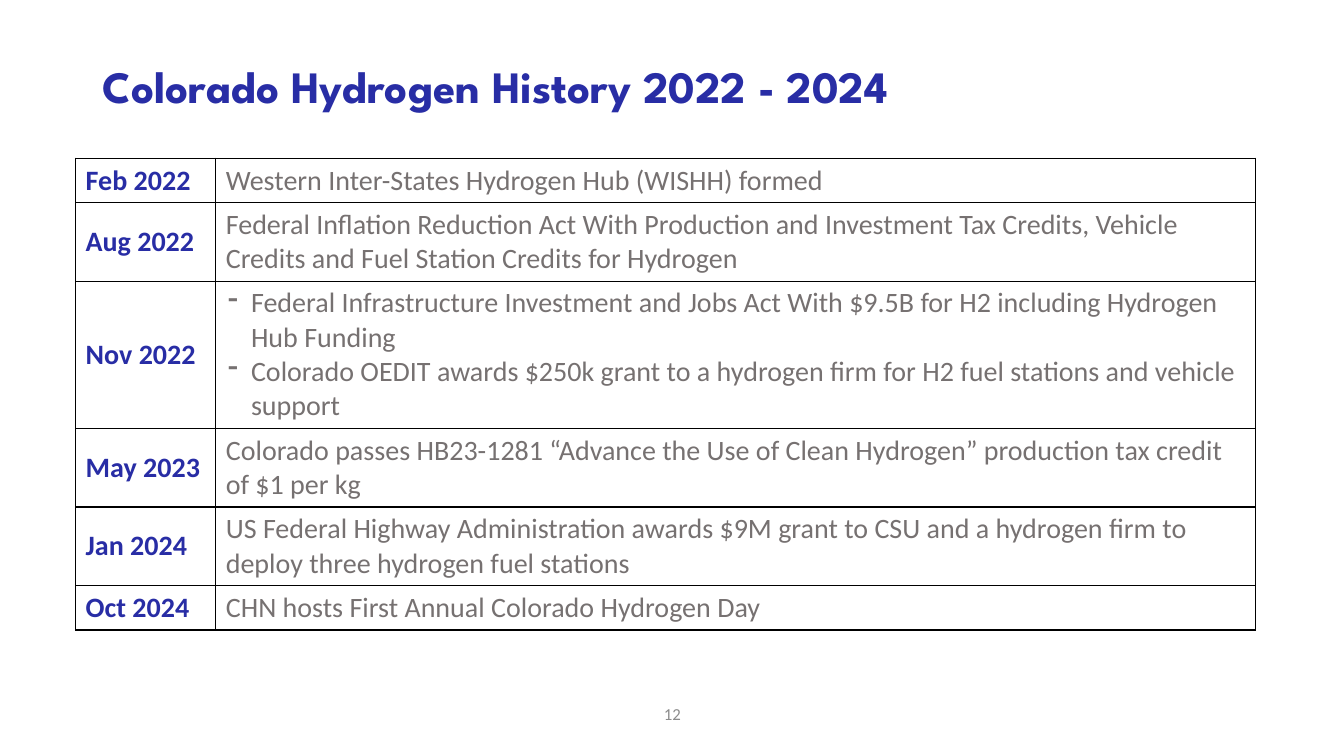
from lxml.etree import SubElement as Sub
from pptx import Presentation
from pptx.dml.color import RGBColor as RGB
from pptx.enum.text import MSO_ANCHOR as Anchor, PP_ALIGN as Align
from pptx.oxml import parse_xml
from pptx.oxml.ns import nsdecls, qn
from pptx.util import Inches, Pt

WIDE, HIGH = 13.33, 7.5
BLUE, GREY, PALE, BLACK = "282DA5", "767171", "8C8C8C", "000000"
LINE, PAD = 0.34, 0.1  # height of a text line, and of a cell's two margins
COLS = (1.39, 10.31)
EVENTS = [
    ("Feb 2022", 1, ["Western Inter-States Hydrogen Hub (WISHH) formed"]),
    ("Aug 2022", 2, ["Federal Inflation Reduction Act With Production and Investment Tax Credits, "
                     "Vehicle Credits and Fuel Station Credits for Hydrogen"]),
    ("Nov 2022", 4, ["Federal Infrastructure Investment and Jobs Act With $9.5B for H2 "
                     "including Hydrogen Hub Funding",
                     "Colorado OEDIT awards $250k grant to a hydrogen firm for H2 fuel "
                     "stations and vehicle support"]),
    ("May 2023", 2, ["Colorado passes HB23-1281 “Advance the Use of Clean Hydrogen” "
                     "production tax credit of $1 per kg"]),
    ("Jan 2024", 2, ["US Federal Highway Administration awards $9M grant to CSU and "
                     "a hydrogen firm to deploy three hydrogen fuel stations"]),
    ("Oct 2024", 1, ["CHN hosts First Annual Colorado Hydrogen Day"]),
]


def color(code):
    return RGB.from_string(code)


def bullet(para, mark="⁃", step=0.25):
    props = para._p.get_or_add_pPr()
    props.set("marL", str(Inches(step)))
    props.set("indent", str(-Inches(step)))
    Sub(props, qn("a:buChar")).set("char", mark)


def write(frame, *lines, size=20, face="Calibri", ink=GREY, bold=False,
          align=Align.LEFT, space=None, marks=False):
    frame.word_wrap = True
    for i, line in enumerate(lines):
        para = frame.add_paragraph() if i else frame.paragraphs[0]
        if marks:
            bullet(para)
        para.alignment = align
        para.line_spacing = space
        run = para.add_run()
        run.text = line
        font = run.font
        font.size, font.name, font.bold = Pt(size), face, bold
        font.color.rgb = color(ink)


def label(slide, text, left, top, width, height, **form):
    box = slide.shapes.add_textbox(*map(Inches, (left, top, width, height)))
    box.text_frame.vertical_anchor = Anchor.MIDDLE
    write(box.text_frame, text, **form)


def border(cell):
    cell.fill.background()
    props = cell._tc.get_or_add_tcPr()
    for i, side in enumerate("LRTB"):
        props.insert(i, parse_xml(
            f'<a:ln{side} {nsdecls("a")} w="{Pt(1)}"><a:solidFill>'
            f'<a:srgbClr val="{BLACK}"/></a:solidFill></a:ln{side}>'))


def timeline(slide, left, top):
    highs = [PAD + LINE * count for _, count, _ in EVENTS]
    frame = slide.shapes.add_table(len(EVENTS), len(COLS), *map(
        Inches, (left, top, sum(COLS), sum(highs))))
    table = frame.table
    table.first_row = table.horz_banding = False
    for col, width in zip(table.columns, COLS):
        col.width = Inches(width)
    for row, high, (date, _, notes) in zip(table.rows, highs, EVENTS):
        row.height = Inches(high)
        when, what = row.cells
        border(when)
        border(what)
        when.vertical_anchor = Anchor.MIDDLE
        write(when.text_frame, date, ink=BLUE, bold=True)
        write(what.text_frame, *notes, marks=len(notes) > 1)


def main():
    deck = Presentation()
    deck.slide_width, deck.slide_height = Inches(WIDE), Inches(HIGH)
    slide = deck.slides.add_slide(deck.slide_layouts[6])
    label(slide, "Colorado Hydrogen History 2022 - 2024", 0.92, 0.4, 11.5, 0.97,
          size=32, face="League Spartan", ink=BLUE, bold=True, space=0.9)
    timeline(slide, 0.75, 1.57)
    label(slide, "12", 5.17, 6.88, 3, 0.4, size=12, ink=PALE, align=Align.CENTER)
    deck.save("out.pptx")


if __name__ == "__main__":
    main()
